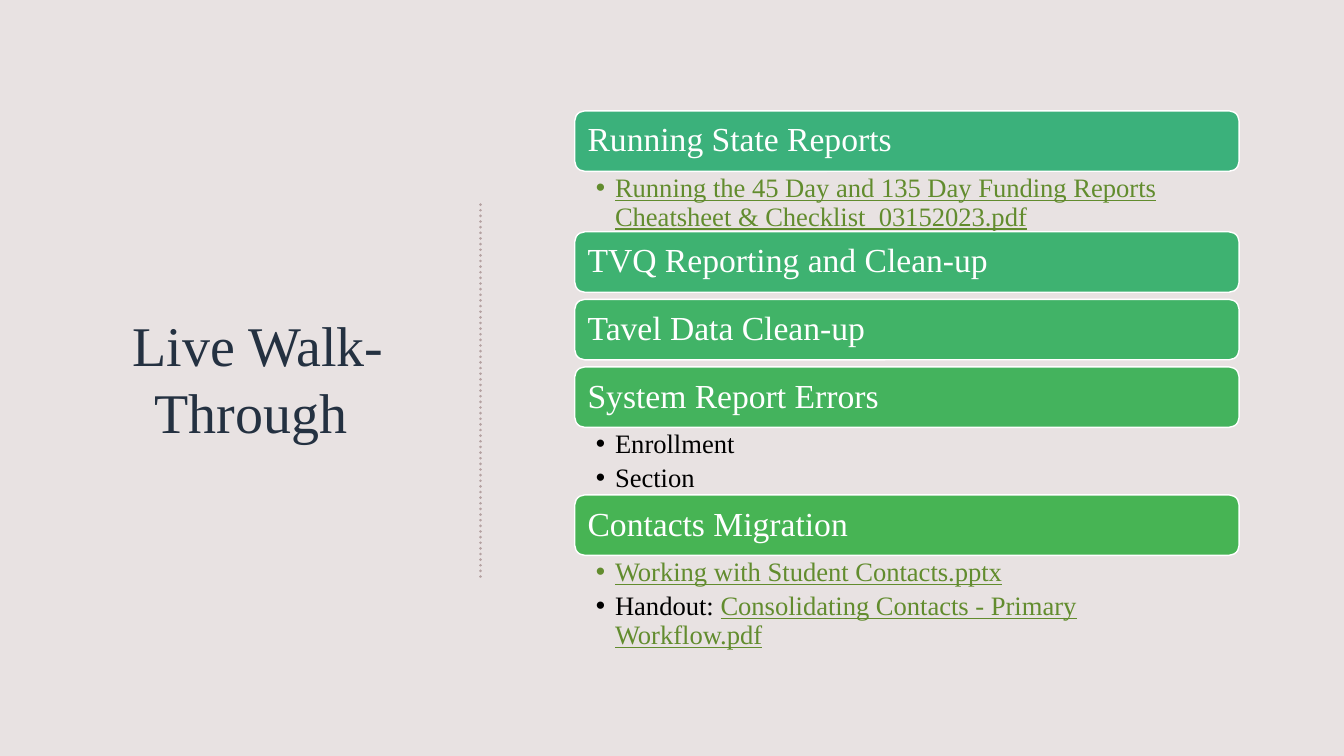
from dataclasses import dataclass

from lxml.etree import SubElement
from pptx import Presentation
from pptx.dml.color import RGBColor
from pptx.enum.dml import MSO_LINE
from pptx.enum.shapes import MSO_CONNECTOR, MSO_SHAPE
from pptx.enum.text import MSO_ANCHOR, MSO_AUTO_SIZE, PP_ALIGN
from pptx.oxml.ns import qn
from pptx.util import Inches, Pt


@dataclass(frozen=True)
class Theme:
    font: str = "Times New Roman"
    background: str = "E8E2E2"
    title: str = "243141"
    divider: str = "B5A2A2"
    white: str = "FFFFFF"
    text: str = "000000"
    link: str = "628C2E"
    bars: tuple = ("3BB17B", "3EB271", "41B367", "44B35D", "47B454")
    title_size: int = 40
    bar_size: int = 24
    list_size: int = 19


theme = Theme()


def set_font(font, size, color):
    font.name = theme.font
    font.size = Pt(size)
    font.bold = False
    font.color.rgb = RGBColor.from_string(color)


def prepare_frame(frame, left, top, right, bottom, anchor):
    frame.word_wrap = True
    frame.auto_size = MSO_AUTO_SIZE.NONE
    frame.vertical_anchor = anchor
    frame.margin_left, frame.margin_top = Inches(left), Inches(top)
    frame.margin_right, frame.margin_bottom = Inches(right), Inches(bottom)


BAR_LEFT, BAR_WIDTH, BAR_HEIGHT, BAR_GAP = 5.7, 6.59, 0.6, 0.07
INDENT = 0.19

topics = [
    ("Running State Reports", 0.6, [
        [("Running the 45 Day and 135 Day Funding Reports Cheatsheet & Checklist_03152023.pdf", True)],
    ]),
    ("TVQ Reporting and Clean-up", BAR_GAP, []),
    ("Tavel Data Clean-up", BAR_GAP, []),
    ("System Report Errors", 0.67, [
        [("Enrollment", False)],
        [("Section", False)],
    ]),
    ("Contacts Migration", 0.92, [
        [("Working with Student Contacts.pptx", True)],
        [("Handout: ", False), ("Consolidating Contacts - Primary Workflow.pdf", True)],
    ]),
]

deck = Presentation()
deck.slide_width, deck.slide_height = Inches(13.33), Inches(7.5)
comparison_layout = deck.slide_layouts[4]
page = deck.slides.add_slide(comparison_layout)
page.background.fill.solid()
page.background.fill.fore_color.rgb = RGBColor.from_string(theme.background)

title = page.shapes.title
title.left, title.top = Inches(1.04), Inches(1.73)
title.width, title.height = Inches(3.04), Inches(4.03)
prepare_frame(title.text_frame, 0.1, 0.05, 0.1, 0.05, MSO_ANCHOR.MIDDLE)
title.text_frame.text = "Live Walk-Through "
para = title.text_frame.paragraphs[0]
para.alignment = PP_ALIGN.CENTER
set_font(para.font, theme.title_size, theme.title)

divider = page.shapes.add_connector(
    MSO_CONNECTOR.STRAIGHT, Inches(4.77), Inches(2.03), Inches(4.77), Inches(5.74))
divider.line.color.rgb = RGBColor.from_string(theme.divider)
divider.line.width = Pt(2)
divider.line.dash_style = MSO_LINE.ROUND_DOT
divider.element.spPr.find(qn("a:ln")).set("cap", "rnd")
SubElement(divider.element.spPr, qn("a:effectLst"))

bodies = [box for box in page.placeholders if box.placeholder_format.idx in (1, 2, 3, 4)]
top = 1.1
for (heading, space_below, items), color in zip(topics, theme.bars):
    bar = page.shapes.add_shape(
        MSO_SHAPE.ROUNDED_RECTANGLE,
        Inches(BAR_LEFT), Inches(top), Inches(BAR_WIDTH), Inches(BAR_HEIGHT))
    bar.shadow.inherit = False
    bar.fill.solid()
    bar.fill.fore_color.rgb = RGBColor.from_string(color)
    bar.line.color.rgb = RGBColor.from_string(theme.white)
    bar.line.width = Pt(1)
    prepare_frame(bar.text_frame, 0.1, 0.1, 0.1, 0.1, MSO_ANCHOR.MIDDLE)
    bar.text_frame.text = heading
    para = bar.text_frame.paragraphs[0]
    para.alignment = PP_ALIGN.LEFT
    para.line_spacing = 0.9
    set_font(para.font, theme.bar_size, theme.white)
    top += BAR_HEIGHT

    if items:
        body = bodies.pop(0)
        body.left, body.top = Inches(BAR_LEFT), Inches(top)
        body.width, body.height = Inches(BAR_WIDTH), Inches(space_below)
        frame = body.text_frame
        prepare_frame(frame, 0.21, 0.03, 0.19, 0.03, MSO_ANCHOR.TOP)
        for number, item in enumerate(items):
            para = frame.add_paragraph() if number else frame.paragraphs[0]
            para.line_spacing = 0.9
            para.space_before, para.space_after = Pt(0), Pt(4)
            properties = para._p.get_or_add_pPr()
            properties.set("marL", str(Inches(INDENT)))
            properties.set("indent", str(-Inches(INDENT)))
            SubElement(properties, qn("a:buChar"), char="•")
            set_font(para.font, theme.list_size, theme.text)
            for words, is_link in item:
                span = para.add_run()
                span.text = words
                if is_link:
                    span.font.color.rgb = RGBColor.from_string(theme.link)
                    span.font.underline = True
    top += space_below

for body in bodies:
    body.element.getparent().remove(body.element)

deck.save("out.pptx")
